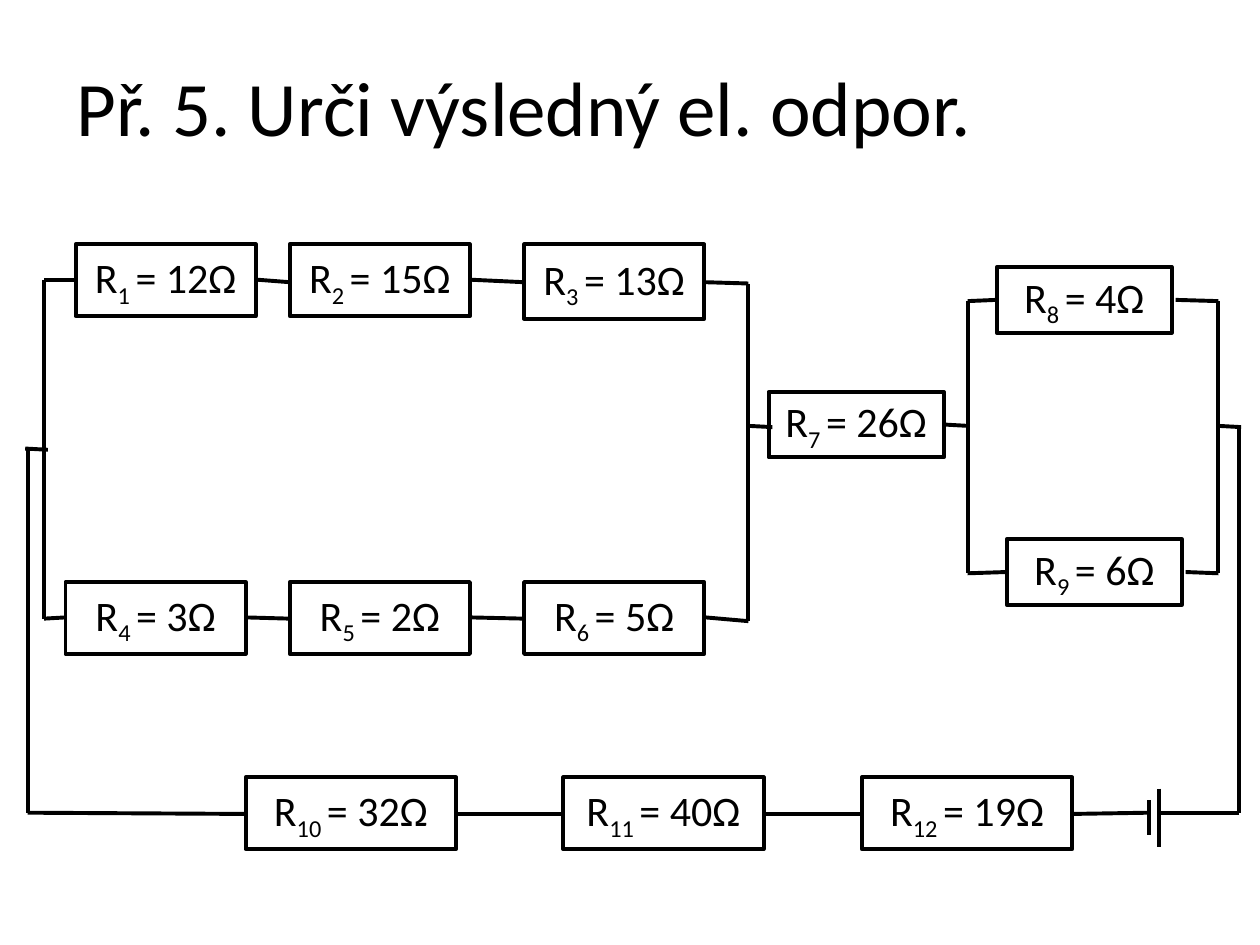
from itertools import pairwise

from lxml.etree import SubElement
from pptx import Presentation
from pptx.dml.color import RGBColor
from pptx.enum.shapes import MSO_CONNECTOR, MSO_SHAPE
from pptx.enum.text import MSO_ANCHOR, PP_ALIGN
from pptx.oxml.ns import qn
from pptx.util import Inches, Pt

COLS, ROWS = 100, 75
CELL = Inches(0.1)
INK = "000000"
FONT = "Calibri"

# number, ohms, left column, top row, columns, rows
PARTS = [
    (1, 12, 6, 19.4, 14.3, 5.7),
    (2, 15, 23, 19.4, 14.3, 5.7),
    (3, 13, 41.6, 19.4, 14.3, 5.9),
    (4, 3, 5.2, 46.2, 14.3, 5.7),
    (5, 2, 23, 46.2, 14.3, 5.7),
    (6, 5, 41.6, 46.2, 14.3, 5.7),
    (7, 26, 61, 31.1, 13.9, 5.2),
    (8, 4, 79.1, 21.2, 13.9, 5.2),
    (9, 6, 79.9, 42.8, 13.9, 5.2),
    (10, 32, 19.5, 61.7, 16.7, 5.7),
    (11, 40, 44.7, 61.7, 15.9, 5.7),
    (12, 19, 68.4, 61.7, 16.7, 5.7),
]

# each wire runs through its (column, row) points
WIRES = [
    # left block
    [(5.2, 49), (3.5, 49.1), (3.5, 22.2), (6, 22.2)],
    [(20.4, 22.2), (23, 22.4)],
    [(37.3, 22.2), (41.6, 22.4)],
    [(19.5, 49), (23, 49.1)],
    [(37.3, 49), (41.6, 49.1)],
    [(56, 22.4), (59.4, 22.5), (59.4, 49.3), (56, 49)],
    # middle and right block
    [(59.4, 33.8), (61.3, 33.9)],
    [(75, 33.7), (76.8, 33.8)],
    [(79.1, 23.8), (76.8, 23.9), (76.8, 45.5), (79.9, 45.4)],
    [(93.3, 23.8), (96.7, 23.9), (96.7, 45.5), (94.1, 45.4)],
    # return path
    [(96.7, 33.8), (98.5, 33.9)],
    [(98.3, 33.8), (98.3, 64.5), (92, 64.5)],
    [(91.2, 64.5), (85.1, 64.6)],
    [(68.4, 64.6), (60.6, 64.6)],
    [(44.7, 64.6), (36.2, 64.6)],
    [(19.5, 64.6), (2.2, 64.5), (2.2, 35.6)],
    [(2, 35.6), (3.8, 35.7)],
    # battery plates
    [(91.2, 63.5), (91.2, 66.3)],
    [(92, 62.6), (92, 67.2)],
]


def grid(*cells):
    """Turn columns or rows into slide lengths."""
    return [round(n * CELL) for n in cells]


def tint(color, code):
    color.rgb = RGBColor.from_string(code)


def style(par, size, align):
    par.alignment = align
    par.font.name = FONT
    par.font.size = Pt(size)
    tint(par.font.color, INK)


def draw(line):
    tint(line.color, INK)
    line.width = Pt(2.25)


def add_title(slide, text):
    frame = slide.shapes.add_textbox(*grid(5.1, 2.9, 90, 10.9)).text_frame
    frame.word_wrap = True
    frame.vertical_anchor = MSO_ANCHOR.MIDDLE
    par = frame.paragraphs[0]
    par.text = text
    style(par, 44, PP_ALIGN.JUSTIFY)


def add_part(slide, num, ohms, *place):
    """Add a resistor box with its label."""
    box = slide.shapes.add_shape(MSO_SHAPE.RECTANGLE, *grid(*place))
    box.shadow.inherit = False
    box.fill.background()
    draw(box.line)
    frame = box.text_frame
    frame.word_wrap = False
    frame.vertical_anchor = MSO_ANCHOR.MIDDLE
    par = frame.paragraphs[0]
    style(par, 24, PP_ALIGN.CENTER)
    par.space_before = Pt(5)
    runs = [par.add_run() for _ in range(3)]
    for run, text in zip(runs, ("R", f"{num} ", f"= {ohms}Ω")):
        run.text = text
    runs[1].font._element.set("baseline", "-25000")


def add_wire(slide, points):
    for start, end in pairwise(points):
        line = slide.shapes.add_connector(
            MSO_CONNECTOR.STRAIGHT, *grid(*start, *end))
        draw(line.line)
        SubElement(line._element.spPr, qn("a:effectLst"))


def main():
    deck = Presentation()
    deck.slide_width, deck.slide_height = grid(COLS, ROWS)
    slide = deck.slides.add_slide(deck.slide_layouts[6])
    add_title(slide, "Př. 5. Urči výsledný el. odpor.")
    for part in PARTS:
        add_part(slide, *part)
    for wire in WIRES:
        add_wire(slide, wire)
    deck.save("out.pptx")


if __name__ == "__main__":
    main()
